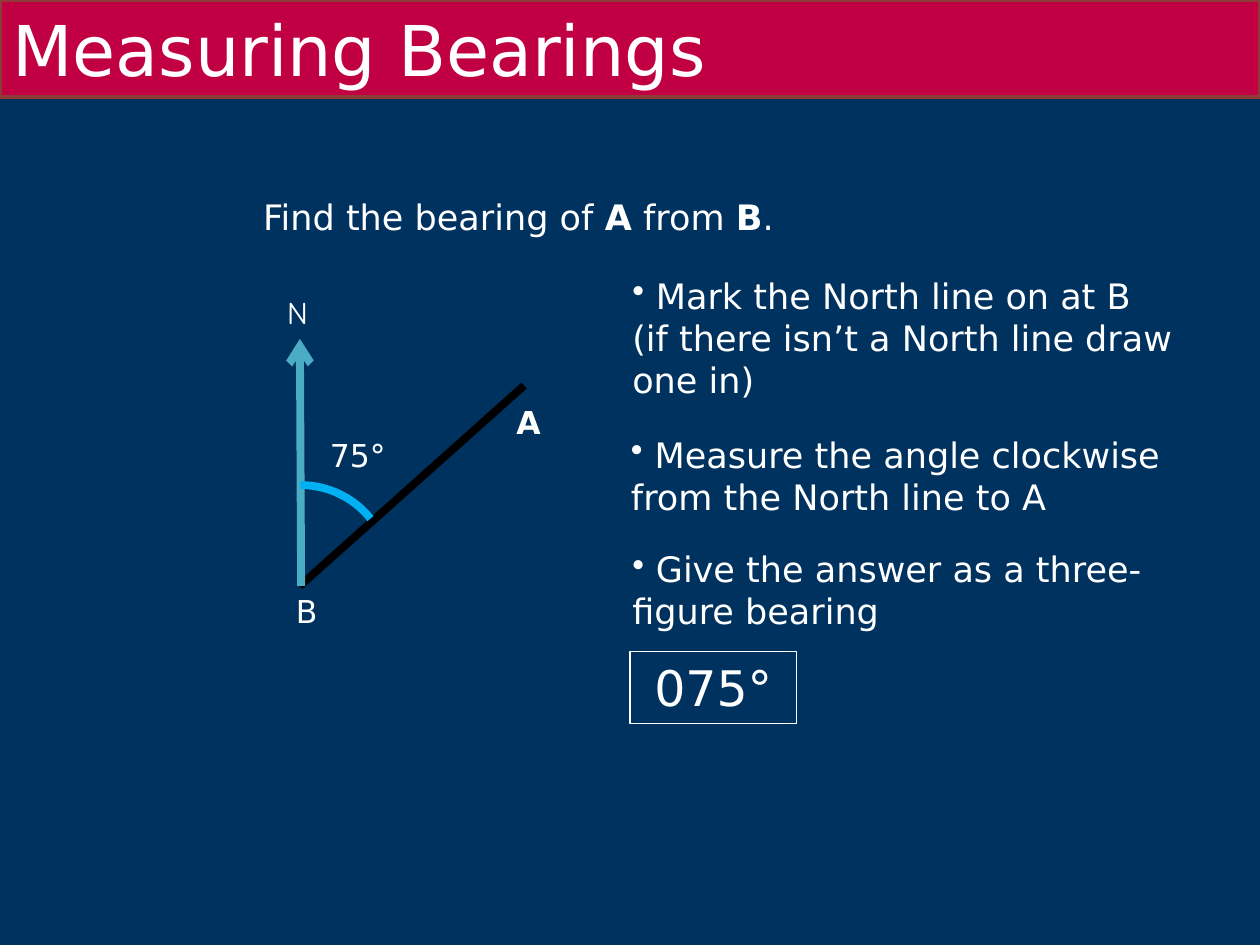
from dataclasses import dataclass

import pptx
import pptx.dml.color
import pptx.enum.shapes
import pptx.enum.text
import pptx.oxml
import pptx.oxml.ns
import pptx.util
from pptx.util import Inches

FONT = "DejaVu Sans"
WHITE = "FFFFFF"
ALIGN = pptx.enum.text.PP_ALIGN
ANCHOR = pptx.enum.text.MSO_ANCHOR
SHAPE = pptx.enum.shapes.MSO_SHAPE


@dataclass
class Label:
    text: str
    left: float
    top: float
    width: float
    height: float = 0.4
    size: float = 18
    font: str = FONT
    bold: bool = False
    bullet: bool = False
    wrap: bool = True


@dataclass
class Ray:
    start: tuple[float, float]
    end: tuple[float, float]
    color: str
    arrow: bool = False


def rgb(color: str) -> pptx.dml.color.RGBColor:
    return pptx.dml.color.RGBColor.from_string(color)


def add_xml(parent, tag: str, **attributes: str) -> None:
    element = pptx.oxml.parse_xml(f"<a:{tag} {pptx.oxml.ns.nsdecls('a')}/>")
    for name, value in attributes.items():
        element.set(name, value)
    parent.append(element)


def write_text(shape, text: str, *, size: float, font: str = FONT, bold: bool = False,
               align=ALIGN.LEFT, anchor=ANCHOR.TOP, wrap: bool = True,
               bullet: bool = False) -> None:
    """Write one paragraph; parts between asterisks switch the weight."""
    frame = shape.text_frame
    frame.word_wrap = wrap
    frame.vertical_anchor = anchor
    frame.auto_size = pptx.enum.text.MSO_AUTO_SIZE.NONE
    paragraph = frame.paragraphs[0]
    paragraph.alignment = align
    for index, part in enumerate(text.split("*")):
        run = paragraph.add_run()
        run.text = part
        run.font.name = font
        run.font.size = pptx.util.Pt(size)
        run.font.bold = bold or index % 2 == 1
        run.font.color.rgb = rgb(WHITE)
    if bullet:
        add_xml(paragraph._p.get_or_add_pPr(), "buChar", char="•")


def style_line(shape, color: str, width: float) -> None:
    shape.line.color.rgb = rgb(color)
    shape.line.width = pptx.util.Pt(width)


def add_label(slide, label: Label) -> None:
    box = slide.shapes.add_textbox(Inches(label.left), Inches(label.top),
                                   Inches(label.width), Inches(label.height))
    write_text(box, label.text, size=label.size, font=label.font, bold=label.bold,
               bullet=label.bullet, wrap=label.wrap)


def add_ray(slide, ray: Ray) -> None:
    connector = slide.shapes.add_connector(
        pptx.enum.shapes.MSO_CONNECTOR.STRAIGHT,
        *(Inches(value) for value in ray.start + ray.end))
    style_line(connector, ray.color, 4.5)
    if ray.arrow:
        add_xml(connector.line._get_or_add_ln(), "tailEnd", type="arrow")
    add_xml(connector._element.spPr, "effectLst")


def add_outline(slide, kind, left: float, top: float, width: float, height: float,
                *, color: str, line_width: float):
    shape = slide.shapes.add_shape(kind, Inches(left), Inches(top),
                                   Inches(width), Inches(height))
    shape.shadow.inherit = False
    shape.fill.background()
    style_line(shape, color, line_width)
    return shape


LABELS = [
    Label("Find the bearing of *A* from *B*.", 1.99, 1.5, 5.36, 0.44, size=20),
    # Steps
    Label(" Mark the North line on at B (if there isn’t a North line draw one in)",
          4.92, 2.13, 4.5, 1.11, size=20, bullet=True),
    Label(" Measure the angle clockwise from the North line to A",
          4.91, 3.39, 4.5, 0.77, size=20, bullet=True),
    Label(" Give the answer as a three-figure bearing",
          4.92, 4.3, 4.5, 0.77, size=20, bullet=True),
    # Diagram
    Label("A", 4, 3.15, 0.4, bold=True, wrap=False),
    Label("B", 2.25, 4.65, 0.43),
    Label("N", 2.18, 2.28, 0.4, font="Comic Neue", wrap=False),
    Label("75°", 2.52, 3.41, 0.75),
]

RAYS = [
    Ray((2.38, 4.65), (4.16, 3.06), "000000"),
    Ray((2.39, 4.65), (2.38, 2.69), "4BACC6", arrow=True),
]


def main() -> None:
    presentation = pptx.Presentation()
    presentation.slide_width = Inches(10)
    presentation.slide_height = Inches(7.5)
    slide = presentation.slides.add_slide(presentation.slide_layouts[5])
    slide.background.fill.solid()
    slide.background.fill.fore_color.rgb = rgb("00325F")

    # Title band
    title = slide.shapes.title
    title.left, title.top = Inches(0), Inches(0)
    title.width, title.height = Inches(10), Inches(0.77)
    title.fill.solid()
    title.fill.fore_color.rgb = rgb("C10043")
    style_line(title, "8E3B39", 2)
    write_text(title, "Measuring Bearings", size=40, anchor=ANCHOR.MIDDLE)

    # Bearing diagram and wording
    for ray in RAYS:
        add_ray(slide, ray)
    arc = add_outline(slide, SHAPE.ARC, 1.67, 3.85, 1.43, 1.43,
                      color="00B0F0", line_width=4.5)
    arc.adjustments[0] = 162
    arc.adjustments[1] = 192.66
    for label in LABELS:
        add_label(slide, label)

    # Answer
    answer = add_outline(slide, SHAPE.RECTANGLE, 5, 5.17, 1.32, 0.57,
                         color=WHITE, line_width=0.75)
    write_text(answer, "075°", size=28, align=ALIGN.CENTER)

    presentation.save("out.pptx")


if __name__ == "__main__":
    main()
